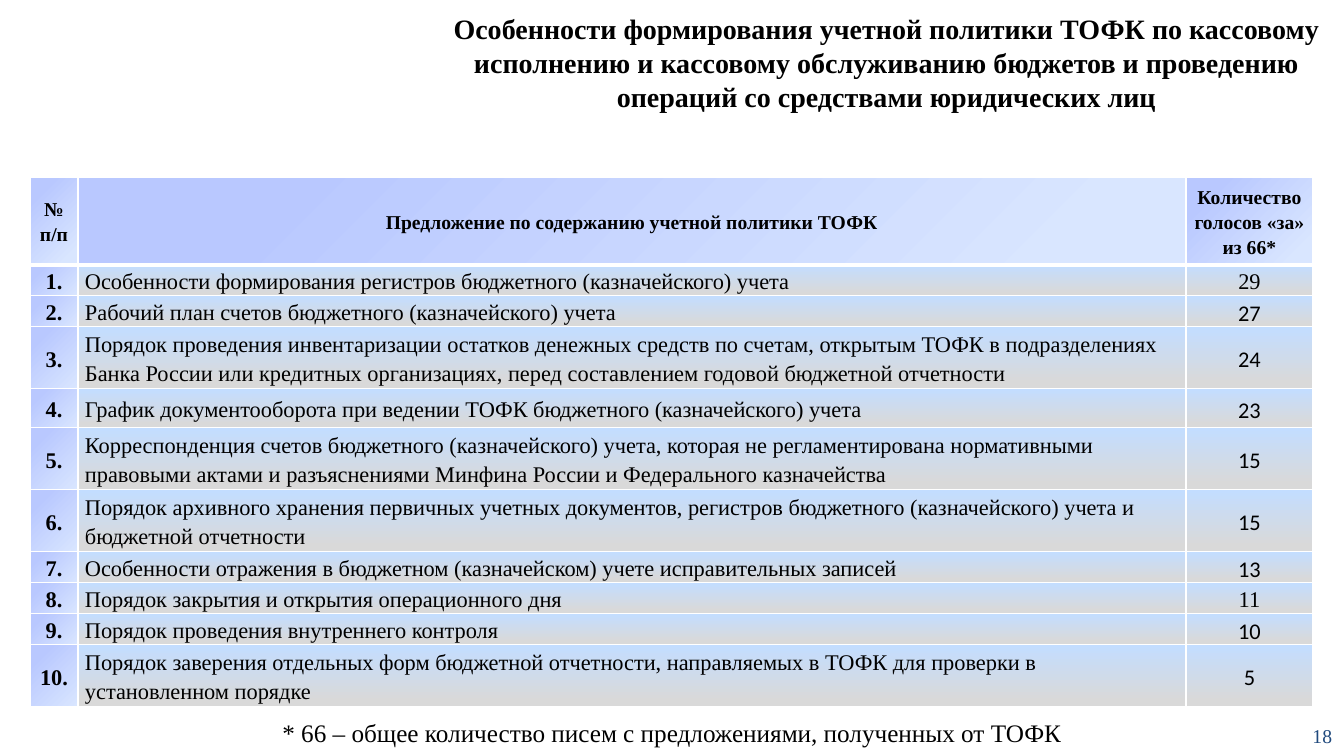
from lxml import etree
from pptx import Presentation
from pptx import util as u
from pptx.dml.color import RGBColor
from pptx.enum import text
from pptx.oxml import ns

SCALE = 914400 / 100.8
BLACK = RGBColor(0x00, 0x00, 0x00)
WHITE = RGBColor(0xFF, 0xFF, 0xFF)
NAVY = RGBColor(0x1F, 0x49, 0x7D)
LILAC = RGBColor(0xB9, 0xC8, 0xFF)
PALE_BLUE = RGBColor(0xD9, 0xE6, 0xFF)
SKY = RGBColor(0xC3, 0xDD, 0xFF)
GREY = RGBColor(0xD9, 0xD9, 0xD9)
SERIF, SANS = "Times New Roman", "Calibri"
LEFT, CENTER, RIGHT = text.PP_ALIGN.LEFT, text.PP_ALIGN.CENTER, text.PP_ALIGN.RIGHT

TITLE = ("Особенности формирования учетной политики ТОФК по кассовому исполнению "
         "и кассовому обслуживанию бюджетов и проведению операций со средствами "
         "юридических лиц")
FOOTNOTE = "* 66 – общее количество писем с предложениями, полученных от ТОФК"
HEADINGS = ["№ п/п", "Предложение по содержанию учетной политики ТОФК",
            "Количество голосов «за» из 66*"]
COLUMN_WIDTHS = [48, 1108, 127]
HEADER_HEIGHT = 88
# Proposal, votes, font of the votes, row height
PROPOSALS = [
    ("Особенности формирования регистров бюджетного (казначейского) учета",
     29, SERIF, 30),
    ("Рабочий план счетов бюджетного (казначейского) учета", 27, SANS, 31),
    ("Порядок проведения инвентаризации остатков денежных средств по счетам, "
     "открытым ТОФК в подразделениях Банка России или кредитных организациях, "
     "перед составлением годовой бюджетной отчетности", 24, SANS, 62),
    ("График документооборота при ведении ТОФК бюджетного (казначейского) учета",
     23, SANS, 39),
    ("Корреспонденция счетов бюджетного (казначейского) учета, которая не "
     "регламентирована нормативными правовыми актами и разъяснениями Минфина "
     "России и Федерального казначейства", 15, SANS, 61),
    ("Порядок архивного хранения первичных учетных документов, регистров "
     "бюджетного (казначейского) учета и бюджетной отчетности", 15, SANS, 62),
    ("Особенности отражения в бюджетном (казначейском) учете исправительных записей",
     13, SANS, 31),
    ("Порядок закрытия и открытия операционного дня", 11, SERIF, 31),
    ("Порядок проведения внутреннего контроля", 10, SANS, 31),
    ("Порядок заверения отдельных форм бюджетной отчетности, направляемых в ТОФК "
     "для проверки в установленном порядке", 5, SANS, 62),
]


def px(length):
    return u.Emu(round(length * SCALE))


def write(frame, words, size=16, font=SERIF, color=BLACK, bold=False,
          align=CENTER, spacing=None):
    frame.word_wrap = True
    para = frame.paragraphs[0]
    para.alignment = align
    para.line_spacing = spacing
    span = para.add_run()
    span.text = words
    span.font.size = u.Pt(size)
    span.font.name = font
    span.font.bold = bold
    span.font.color.rgb = color


def add_text(page, box, words, anchor=text.MSO_ANCHOR.TOP, **style):
    frame = page.shapes.add_textbox(*map(px, box)).text_frame
    frame.vertical_anchor = anchor
    write(frame, words, **style)


def child(parent, tag, **attributes):
    return etree.SubElement(parent, ns.qn(tag), attributes)


def add_borders(cell, bottom):
    for side, points in (("L", 1), ("R", 1), ("T", 1), ("B", bottom)):
        line = child(cell._tc.get_or_add_tcPr(), f"a:ln{side}", w=str(u.Pt(points)))
        child(child(line, "a:solidFill"), "a:srgbClr", val=str(WHITE))


def add_gradient(cell, stops, radial):
    gradient = child(cell._tc.get_or_add_tcPr(), "a:gradFill", rotWithShape="1")
    stop_list = child(gradient, "a:gsLst")
    for percent, color in stops:
        stop = child(stop_list, "a:gs", pos=str(percent * 1000))
        child(stop, "a:srgbClr", val=str(color))
    if radial:
        focus = child(gradient, "a:path", path="circle")
        child(focus, "a:fillToRect", r="100000", b="100000")
    else:
        child(gradient, "a:lin", ang="5400000", scaled="0")


def fill_cell(cell, words, stops, radial=True, inset=7, bottom=1, **style):
    cell.margin_left = cell.margin_right = px(inset)
    cell.margin_top = cell.margin_bottom = 0
    cell.vertical_anchor = text.MSO_ANCHOR.MIDDLE
    write(cell.text_frame, words, spacing=1.15, **style)
    add_borders(cell, bottom)
    add_gradient(cell, stops, radial)


def add_votes_table(page, left, top):
    heights = [HEADER_HEIGHT] + [proposal[-1] for proposal in PROPOSALS]
    table = page.shapes.add_table(
        len(heights), len(COLUMN_WIDTHS), px(left), px(top),
        px(sum(COLUMN_WIDTHS)), px(sum(heights))).table
    table.first_row = table.horz_banding = False
    for column, width in zip(table.columns, COLUMN_WIDTHS):
        column.width = px(width)
    for row, height in zip(table.rows, heights):
        row.height = px(height)

    # Header row
    for index, heading in enumerate(HEADINGS):
        fill_cell(table.cell(0, index), heading, [(18, LILAC), (89, PALE_BLUE)],
                  inset=6, bottom=3, size=14, bold=True)

    # Proposals with their votes
    body = [(0, SKY), (91, GREY)]
    for number, (proposal, votes, font, _) in enumerate(PROPOSALS, 1):
        fill_cell(table.cell(number, 0), f"{number}.",
                  [(18, LILAC), (100, PALE_BLUE)], bold=True)
        fill_cell(table.cell(number, 1), proposal, body, radial=False, align=LEFT)
        fill_cell(table.cell(number, 2), str(votes), body, radial=False, font=font)


def build_slide(deck):
    page = deck.slides.add_slide(deck.slide_layouts[6])
    add_text(page, (1296, 720, 46, 32), "18", anchor=text.MSO_ANCHOR.MIDDLE,
             size=14, color=NAVY, align=RIGHT)
    add_votes_table(page, 30, 177)
    add_text(page, (431, 7, 911, 112), TITLE, size=20, bold=True)
    add_text(page, (96, 712, 1152, 40), FOOTNOTE, size=18)


def main():
    deck = Presentation()
    deck.slide_width, deck.slide_height = px(1344), px(756)
    build_slide(deck)
    deck.save("out.pptx")


if __name__ == "__main__":
    main()
